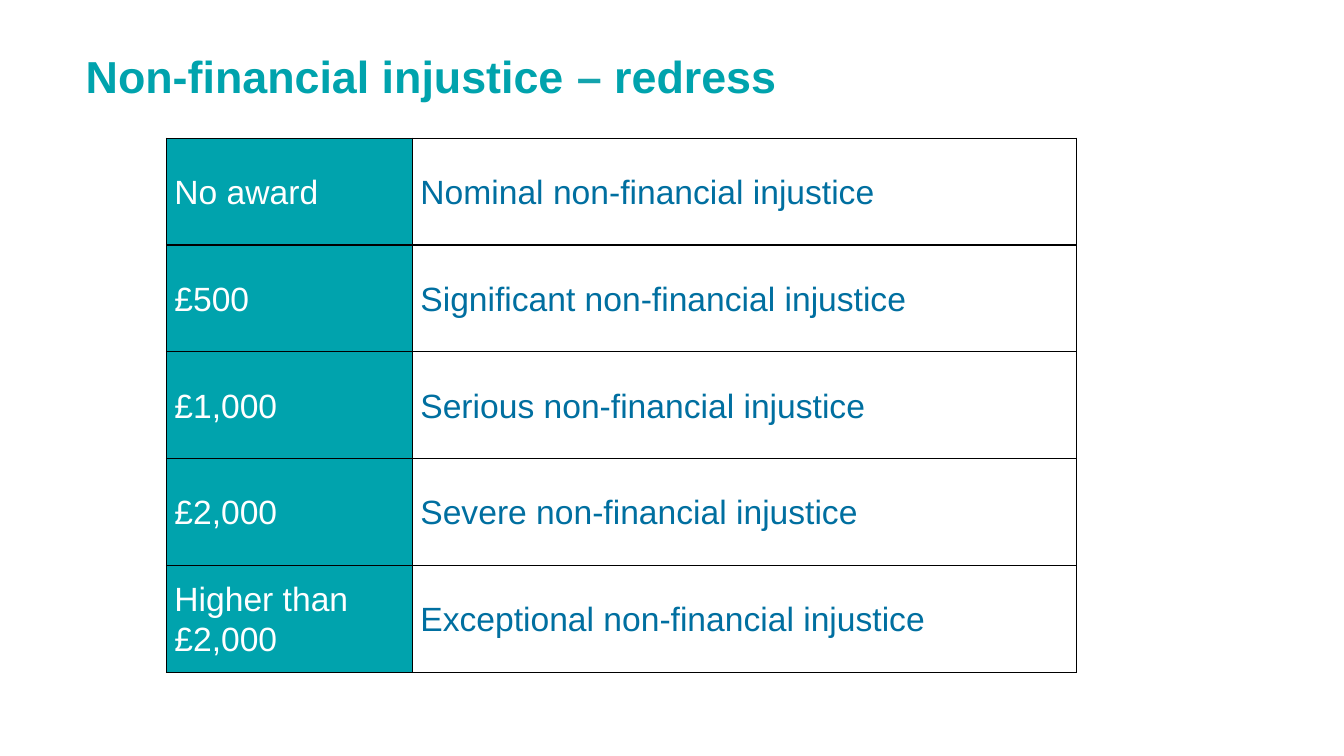
from dataclasses import dataclass

from lxml import etree
from pptx import Presentation
from pptx import util as u
from pptx.dml.color import RGBColor
from pptx.enum import text
from pptx.oxml.ns import qn

PX = 9144  # EMU per px, 100 px to the inch


@dataclass(frozen=True)
class Theme:
    font: str = "Arial"
    teal: str = "00A3AD"
    dash: str = "14A3AD"
    blue: str = "006FA0"
    white: str = "FFFFFF"
    black: str = "000000"
    head: int = 32
    body: int = 24
    rule: int = 1
    lead: float = 1.07


class Board:
    def __init__(self, deck, theme):
        self.theme = theme
        self.slide = deck.slides.add_slide(deck.slide_layouts[6])

    def run(self, para, words, size, color, bold=False):
        run = para.add_run()
        run.text = words
        font = run.font
        font.name, font.size, font.bold = self.theme.font, u.Pt(size), bold
        font.color.rgb = RGBColor.from_string(color)

    def title(self, x, y, w, h, parts):
        box = self.slide.shapes.add_textbox(*(v * PX for v in (x, y, w, h)))
        frame = box.text_frame
        frame.word_wrap = True
        frame.margin_left = frame.margin_right = 0
        frame.margin_top = frame.margin_bottom = 0
        for words, color in parts:
            self.run(frame.paragraphs[0], words, self.theme.head, color, True)

    def border(self, cell):
        props = cell._tc.get_or_add_tcPr()
        for side in "LRTB":
            line = etree.SubElement(props, qn(f"a:ln{side}"), w=str(u.Pt(self.theme.rule)))
            fill = etree.SubElement(line, qn("a:solidFill"))
            etree.SubElement(fill, qn("a:srgbClr"), val=self.theme.black)

    def cell(self, cell, words, color, fill):
        cell.margin_left = cell.margin_right = 8 * PX
        cell.margin_top = cell.margin_bottom = 0
        cell.vertical_anchor = text.MSO_ANCHOR.MIDDLE
        self.border(cell)
        if fill:
            cell.fill.solid()
            cell.fill.fore_color.rgb = RGBColor.from_string(fill)
        else:
            cell.fill.background()
        para = cell.text_frame.paragraphs[0]
        para.line_spacing = self.theme.lead
        self.run(para, words, self.theme.body, color)

    def table(self, x, y, cols, high, rows, looks):
        grid = self.slide.shapes.add_table(
            len(rows), len(cols), x * PX, y * PX,
            sum(cols) * PX, high * len(rows) * PX).table
        grid.first_row = grid.horz_banding = False
        for col, wide in zip(grid.columns, cols):
            col.width = wide * PX
        for row, line in zip(grid.rows, rows):
            row.height = high * PX
            for cell, words, look in zip(row.cells, line, looks):
                self.cell(cell, words, *look)


def main():
    deck = Presentation()
    deck.slide_width, deck.slide_height = 1333 * PX, 750 * PX
    theme = Theme()
    board = Board(deck, theme)

    # Heading
    board.title(85, 48, 907, 54, [
        ("Non-financial injustice ", theme.teal),
        ("–", theme.dash),
        (" redress", theme.teal),
    ])

    # Award for each level of injustice
    awards = [
        ("No award", "Nominal"),
        ("£500", "Significant"),
        ("£1,000", "Serious"),
        ("£2,000", "Severe"),
        ("Higher than £2,000", "Exceptional"),
    ]
    rows = [(sum_, f"{level} non-financial injustice") for sum_, level in awards]
    looks = [(theme.white, theme.teal), (theme.blue, None)]
    board.table(165, 137, (244, 659), 106, rows, looks)

    deck.save("out.pptx")


if __name__ == "__main__":
    main()
